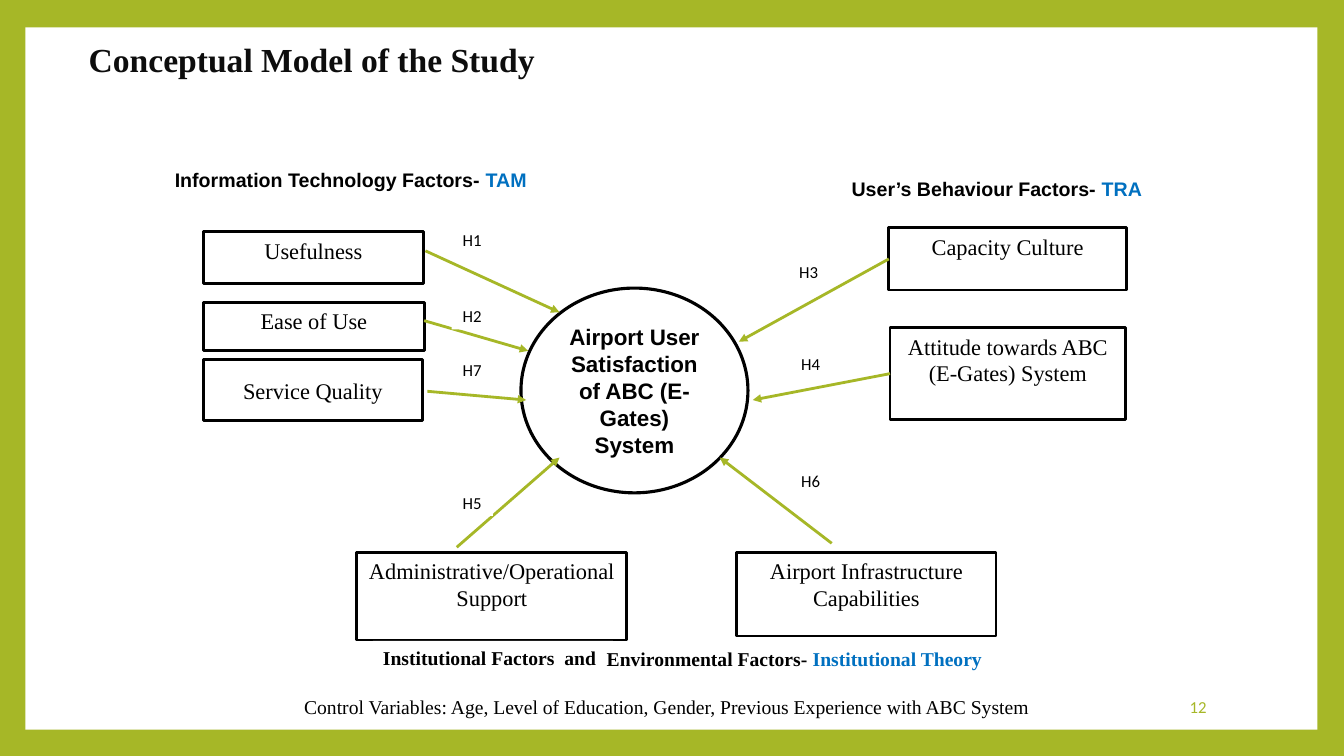
from lxml import etree
from pptx import Presentation
from pptx.dml.color import RGBColor
from pptx.enum.dml import MSO_LINE
from pptx.enum.shapes import MSO_CONNECTOR, MSO_SHAPE
from pptx.enum.text import MSO_ANCHOR, MSO_AUTO_SIZE, PP_ALIGN
from pptx.oxml.ns import qn
from pptx.util import Cm, Pt

RECT, CIRCLE = MSO_SHAPE.RECTANGLE, MSO_SHAPE.FLOWCHART_CONNECTOR
STRAIGHT, SOLID = MSO_CONNECTOR.STRAIGHT, MSO_LINE.SOLID
TOP, MIDDLE = MSO_ANCHOR.TOP, MSO_ANCHOR.MIDDLE
LEFT, CENTER, RIGHT = PP_ALIGN.LEFT, PP_ALIGN.CENTER, PP_ALIGN.RIGHT
SERIF, SANS, SMALL = "Times New Roman", "Arial", "Calibri"
COLORS = {"green": "A6B727", "white": "FFFFFF", "black": "000000",
          "blue": "0070C0", "title": "0D0D0D"}

# Content: lengths in cm, boxes as (left, top, width, height)
TITLE = ("Conceptual Model of the Study", (1.98, 0.86, 11.86, 1.27))
FRAME = (0.64, 0.69, 32.56, 17.7)
FACTORS = {
    "Usefulness": ((5.13, 5.84, 5.54, 1.3), TOP),
    "Ease of Use": ((5.13, 7.62, 5.56, 1.22), TOP),
    "Service Quality": ((5.13, 9.07, 5.51, 1.52), MIDDLE),
    "Capacity Culture": ((22.4, 5.74, 5.99, 1.57), TOP),
    "Attitude towards ABC (E-Gates) System": ((22.43, 8.26, 5.94, 2.31), TOP),
    "Administrative/Operational Support": ((8.99, 13.92, 6.81, 2.21), TOP),
    "Airport Infrastructure Capabilities": ((18.57, 13.92, 6.53, 2.11), TOP),
}
OUTCOME = ("Airport User Satisfaction of ABC (E-Gates) System",
           (13.13, 7.26, 5.72, 5.16))
# Hypothesis, arrow start, arrow end, label corner, factor joined at its left side
HYPOTHESES = [
    ("H1", (10.72, 6.32), (14.1, 7.87), (11.38, 5.66), None),
    ("H2", (10.69, 8.08), (13.31, 8.84), (11.38, 7.59), None),
    ("H3", (22.4, 6.53), (18.62, 8.61), (19.86, 6.48), "Capacity Culture"),
    ("H4", (22.43, 9.42), (18.97, 10.08), (19.91, 8.79),
     "Attitude towards ABC (E-Gates) System"),
    ("H5", (11.51, 13.79), (14.1, 11.53), (11.38, 12.29), None),
    ("H6", (20.96, 13.69), (18.14, 11.53), (19.91, 11.73), None),
    ("H7", (10.77, 9.86), (13.26, 10.08), (11.38, 8.94), None),
]
LABEL_SIZE = (1.04, 0.71)
# Heading, theory, box, font, alignment
HEADINGS = [
    ("Information Technology Factors- ", "TAM",
     (3.91, 4.11, 9.86, 1.04), SANS, CENTER),
    ("User’s Behaviour Factors- ", "TRA",
     (19.86, 4.34, 10.52, 1.04), SANS, CENTER),
    ("Institutional Factors  and", "",
     (9.4, 16.15, 6.05, 1.02), SERIF, LEFT),
    ("Environmental Factors- ", "Institutional Theory",
     (15.04, 16.18, 10.29, 0.71), SERIF, LEFT),
]
CONTROLS = ("Control Variables: Age, Level of Education, Gender, "
            "Previous Experience with ABC System", (7.27, 16.43, 19.08, 2.49))
PAGE = ("12", (25.91, 17.3, 4.75, 1.02))


def rgb(name):
    return RGBColor.from_string(COLORS[name])


def cm(values):
    return [Cm(v) for v in values]


def write(s, runs, size, font, bold=False, align=CENTER, anchor=TOP, wrap=True):
    """Fill a shape with one paragraph of (text, colour) runs."""
    tf = s.text_frame
    tf.word_wrap = wrap
    tf.auto_size = MSO_AUTO_SIZE.NONE
    tf.vertical_anchor = anchor
    p = tf.paragraphs[0]
    p.alignment = align
    for text, color in runs:
        r = p.add_run()
        r.text = text
        r.font.size, r.font.name, r.font.bold = Pt(size), font, bold
        r.font.color.rgb = rgb(color)


def add_box(sp, box, kind=RECT, line=0):
    s = sp.add_shape(kind, *cm(box))
    s.shadow.inherit = False
    s.fill.solid()
    s.fill.fore_color.rgb = rgb("white")
    if line:
        s.line.color.rgb = rgb("black")
        s.line.width = Pt(line)
    else:
        s.line.fill.background()
    return s


def add_arrow(sp, start, end, factor=None):
    c = sp.add_connector(STRAIGHT, *cm(start + end))
    if factor is not None:
        c.begin_connect(factor, 1)
    c.line.color.rgb = rgb("green")
    c.line.width = Pt(2)
    c.line.dash_style = SOLID
    ln = c.line.fill._xPr
    etree.SubElement(ln, qn("a:tailEnd"), type="triangle")
    etree.SubElement(ln.getparent(), qn("a:effectLst"))


def main():
    prs = Presentation()
    prs.slide_width, prs.slide_height = Cm(33.87), Cm(19.05)
    s = prs.slides.add_slide(prs.slide_layouts[5])
    sp = s.shapes

    # Background and white frame, kept behind the title
    s.background.fill.solid()
    s.background.fill.fore_color.rgb = rgb("green")
    frame = add_box(sp, FRAME)
    title = sp.title
    title._element.addprevious(frame._element)

    # Title
    text, box = TITLE
    title.left, title.top, title.width, title.height = cm(box)
    write(title, [(text, "title")], 24, SERIF, True, LEFT, wrap=False)

    # Factors and outcome
    factors = {}
    for text, (box, anchor) in FACTORS.items():
        factors[text] = add_box(sp, box, line=2)
        write(factors[text], [(text, "black")], 16, SERIF, anchor=anchor)
    text, box = OUTCOME
    write(add_box(sp, box, CIRCLE, 2.25), [(text, "black")], 16, SANS, True,
          anchor=MIDDLE)

    # Hypothesis arrows, then their labels on top
    for _, start, end, _, factor in HYPOTHESES:
        add_arrow(sp, start, end, factors.get(factor))
    for name, _, _, corner, _ in HYPOTHESES:
        write(add_box(sp, corner + LABEL_SIZE), [(name, "black")], 12, SMALL)

    # Group headings with their theories
    for text, theory, box, font, align in HEADINGS:
        runs = [(text, "black")] + ([(theory, "blue")] if theory else [])
        write(add_box(sp, box), runs, 14, font, True, align)

    # Control variables and page number
    text, box = CONTROLS
    controls = sp.add_textbox(*cm(box))
    write(controls, [(text, "black")], 14, SERIF, anchor=MIDDLE, wrap=False)
    controls.text_frame.margin_top = Cm(0.38)
    text, box = PAGE
    write(sp.add_textbox(*cm(box)), [(text, "green")], 12, SMALL,
          align=RIGHT, anchor=MIDDLE)

    prs.save("out.pptx")


if __name__ == "__main__":
    main()
